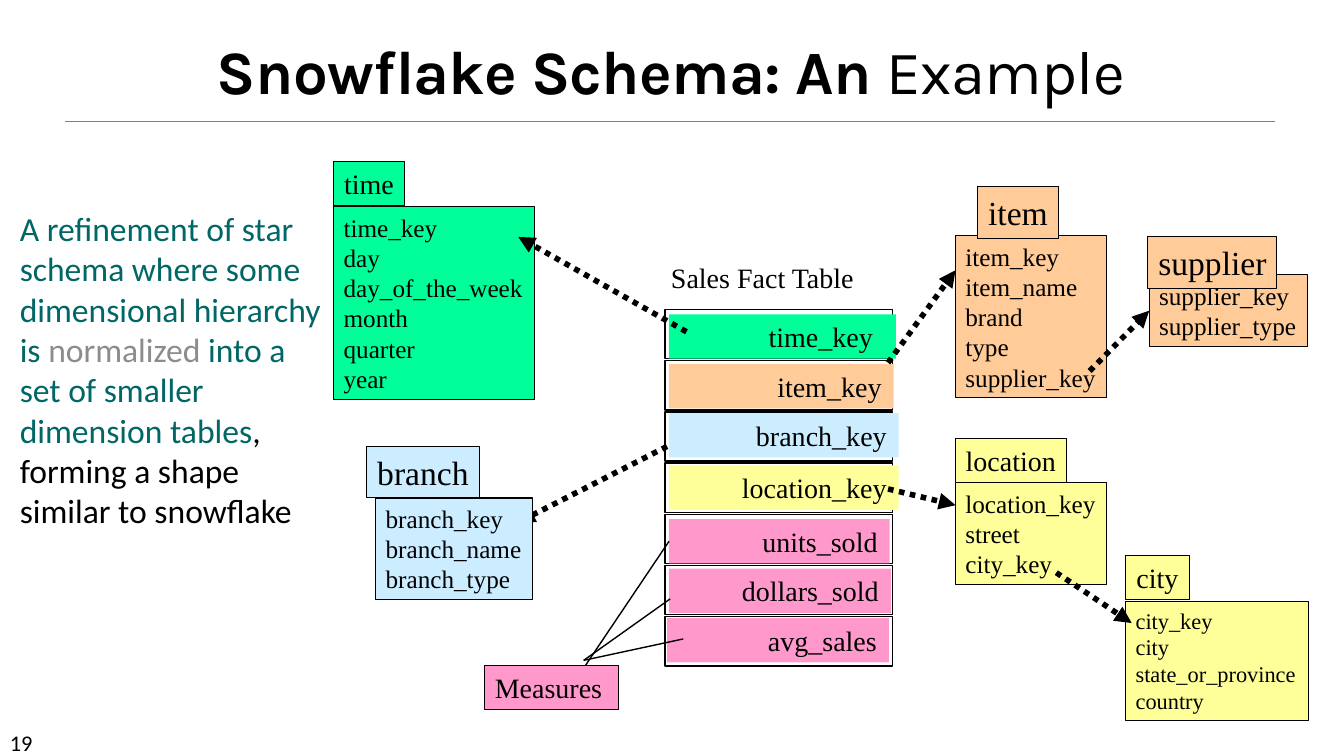
from pptx import Presentation
from pptx.dml.color import RGBColor
from pptx.enum.dml import MSO_LINE
from pptx.enum.shapes import MSO_CONNECTOR, MSO_SHAPE
from pptx.enum.text import MSO_ANCHOR, PP_ALIGN
from pptx.oxml.ns import qn
from pptx.util import Cm, Pt
from lxml import etree

LEFT, CENTER, RIGHT = PP_ALIGN.LEFT, PP_ALIGN.CENTER, PP_ALIGN.RIGHT
TOP, MIDDLE, BOTTOM = MSO_ANCHOR.TOP, MSO_ANCHOR.MIDDLE, MSO_ANCHOR.BOTTOM
RECTANGLE, STRAIGHT = MSO_SHAPE.RECTANGLE, MSO_CONNECTOR.STRAIGHT
DOTTED = MSO_LINE.ROUND_DOT
LEFT_SIDE = 1

BLACK = RGBColor(0x00, 0x00, 0x00)
GRAY = RGBColor(0x80, 0x80, 0x80)
LIGHT_GRAY = RGBColor(0x8C, 0x8C, 0x8C)
TEAL = RGBColor(0x00, 0x66, 0x66)
GREEN = RGBColor(0x00, 0xFF, 0x99)
ORANGE = RGBColor(0xFF, 0xCC, 0x99)
BLUE = RGBColor(0xCC, 0xEC, 0xFF)
YELLOW = RGBColor(0xFF, 0xFF, 0x99)
PINK = RGBColor(0xFF, 0x99, 0xCC)

SERIF, SANS, TITLE_FONT = "Times New Roman", "Calibri", "Karla"


def add_run(paragraph, text, font=SERIF, size=20, color=BLACK, bold=False, spacing=None):
    run = paragraph.add_run()
    run.text = text
    run.font.name = font
    run.font.size = Pt(size)
    run.font.bold = bold
    run.font.color.rgb = color
    if spacing is not None:
        run.font._element.set("spc", str(spacing))


def write(frame, lines, align=LEFT, anchor=TOP, wrap=False, right_inset=0.25, **style):
    """Fill a text frame with one paragraph per line."""
    frame.word_wrap = wrap
    frame.vertical_anchor = anchor
    frame.margin_left, frame.margin_right = Cm(0.25), Cm(right_inset)
    frame.margin_top = frame.margin_bottom = Cm(0.13)
    for i, line in enumerate(lines):
        paragraph = frame.add_paragraph() if i else frame.paragraphs[0]
        paragraph.alignment = align
        add_run(paragraph, line, **style)


def add_box(shapes, box, fill=None, outline=0.75):
    rectangle = shapes.add_shape(RECTANGLE, *map(Cm, box))
    rectangle.shadow.inherit = False
    if fill is None:
        rectangle.fill.background()
    else:
        rectangle.fill.solid()
        rectangle.fill.fore_color.rgb = fill
    if outline:
        rectangle.line.color.rgb = BLACK
        rectangle.line.width = Pt(outline)
    else:
        rectangle.line.fill.background()
    return rectangle


def add_line(slide, start, end, color=BLACK, width=1.0, arrow=False):
    line = slide.shapes.add_connector(STRAIGHT, *map(Cm, start + end))
    line.line.color.rgb = color
    line.line.width = Pt(width)
    properties = line._element.spPr
    if arrow:
        line.line.dash_style = DOTTED
        etree.SubElement(properties.find(qn("a:ln")), qn("a:tailEnd"), type="triangle")
    etree.SubElement(properties, qn("a:effectLst"))
    return line


def add_arrow(slide, start, end):
    return add_line(slide, start, end, width=4, arrow=True)


def add_heading(slide, box):
    left, top, width, height = box
    title = slide.shapes.title
    title.left, title.top, title.width, title.height = map(Cm, box)
    write(title.text_frame, ["Snowflake Schema: An "], align=CENTER, anchor=BOTTOM,
          wrap=True, font=TITLE_FONT, size=44, bold=True, spacing=-50)
    heading = title.text_frame.paragraphs[0]
    heading.line_spacing = 0.85
    add_run(heading, "Example", font=TITLE_FONT, size=44, spacing=-50)
    rule = top + height + 0.23
    add_line(slide, (left + 0.35, rule), (left + width - 0.39, rule), GRAY, 0.5)


def add_definition(slide, box):
    frame = slide.shapes.add_textbox(*map(Cm, box)).text_frame
    write(frame, ["A refinement of star schema where some dimensional hierarchy is "],
          wrap=True, font=SANS, size=24, color=TEAL)
    for text, color in (
        ("normalized", LIGHT_GRAY),
        (" into a set of smaller dimension tables", TEAL),
        (", forming a shape similar to snowflake", BLACK),
    ):
        add_run(frame.paragraphs[0], text, font=SANS, size=24, color=color)


def add_dimension(slide, box, name, tag, fields, fill, name_size=20, field_size=18):
    """Field list in box; tag gives the name's offset from it and its size."""
    left, top, _, _ = box
    dx, dy, tag_width, tag_height = tag
    shapes = slide.shapes.add_group_shape().shapes
    body = add_box(shapes, box, fill)
    write(body.text_frame, fields, size=field_size)
    name_tag = add_box(shapes, (left + dx, top + dy, tag_width, tag_height), fill)
    write(name_tag.text_frame, [name], align=CENTER, anchor=MIDDLE, size=name_size)
    return body


def add_fact_table(slide, box):
    """Seven key and measure rows; returns the labels by column name."""
    left, top, width, height = box
    caption = slide.shapes.add_textbox(Cm(left - 0.1), Cm(top - 1.37), Cm(5.16), Cm(1.12))
    write(caption.text_frame, ["Sales Fact Table"])
    # column, fill, label offset from its row, label width, right inset
    columns = [
        ("time_key", GREEN, 0.1, 0.12, 5.72, 0.58),
        ("item_key", ORANGE, 0.1, 0.08, 5.66, 0.3),
        ("branch_key", BLUE, 0.1, 0.03, 5.79, 0.3),
        ("location_key", YELLOW, 0.1, 0.06, 5.79, 0.3),
        ("units_sold", PINK, 0.1, 0.12, 5.56, 0.3),
        ("dollars_sold", PINK, 0.1, 0.08, 5.59, 0.3),
        ("avg_sales", PINK, 0.05, 0.03, 5.59, 0.3),
    ]
    pitch = height / len(columns)
    labels = {}
    for i, (column, fill, dx, dy, label_width, inset) in enumerate(columns):
        row_top = top + i * pitch
        add_box(slide.shapes, (left, row_top, width, pitch - 0.05), outline=1)
        label = add_box(slide.shapes, (left + dx, row_top + dy, label_width, 1.12), fill, 0)
        write(label.text_frame, [column], align=RIGHT, wrap=True, right_inset=inset)
        labels[column] = label
    return labels


def add_measures(slide, box, units_label):
    left, top, _, _ = box
    measures = add_box(slide.shapes, box, PINK)
    write(measures.text_frame, ["Measures"], wrap=True)
    units_line = add_line(slide, (left + 2.54, top), (16.89, 13.59))
    units_line.end_connect(units_label, LEFT_SIDE)
    for end in ((16.89, 15.09), (17.22, 16.1)):
        add_line(slide, (left + 2.49, top - 0.12), end)


def main():
    deck = Presentation()
    deck.slide_width, deck.slide_height = Cm(33.87), Cm(19.05)
    slide = deck.slides.add_slide(deck.slide_layouts[5])

    # Heading and page number
    add_heading(slide, (1.3, 0.23, 31.22, 2.59))
    page_number = slide.shapes.add_textbox(Cm(0), Cm(18.24), Cm(2.97), Cm(0.76))
    write(page_number.text_frame, ["19"], font=SANS, size=16)

    # Time and location dimensions
    add_dimension(slide, (8.41, 5.21, 5.05, 4.85), "time", (0, -1.15, 1.78, 1.12),
                  ["time_key", "day", "day_of_the_week", "month", "quarter", "year"], GREEN)
    add_dimension(slide, (24.08, 12.17, 3.81, 2.57), "location", (0, -1.12, 2.79, 1.12),
                  ["location_key", "street", "city_key"], YELLOW)

    # Fact table, its measures and the arrows from its keys
    labels = add_fact_table(slide, (16.76, 7.8, 5.74, 9.03))
    add_measures(slide, (12.22, 16.76, 3.38, 1.12), labels["units_sold"])
    add_arrow(slide, (16.81, 11.25), (13.06, 13.16))
    add_arrow(slide, (17.3, 8.36), (13.06, 5.97))
    add_arrow(slide, (22.38, 12.32), (24.08, 12.73))
    add_arrow(slide, (22.38, 9.14), (24.08, 6.81))

    # Item and branch dimensions
    add_dimension(slide, (24.08, 5.94, 3.81, 4.09), "item", (0.56, -1.24, 2.03, 1.3),
                  ["item_key", "item_name", "brand", "type", "supplier_key"], ORANGE, 24)
    add_dimension(slide, (9.47, 12.55, 3.96, 2.57), "branch", (-0.23, -1.3, 2.84, 1.3),
                  ["branch_key", "branch_name", "branch_type"], BLUE, 24)

    # Normalized supplier and city tables
    supplier = add_dimension(slide, (28.96, 6.93, 3.99, 1.8), "supplier",
                             (-0.03, -0.97, 3.25, 1.3),
                             ["supplier_key", "supplier_type"], ORANGE, 24)
    add_arrow(slide, (27.46, 9.35), (28.96, 7.83)).end_connect(supplier, LEFT_SIDE)
    add_dimension(slide, (28.37, 15.16, 4.6, 3), "city", (0, -1.17, 1.6, 1.12),
                  ["city_key", "city", "state_or_province", "country"], YELLOW, field_size=16)
    add_arrow(slide, (26.62, 14.43), (28.52, 15.7))

    # Definition beside the diagram
    add_definition(slide, (0.25, 5.11, 8.36, 9.5))

    deck.save("out.pptx")


if __name__ == "__main__":
    main()
